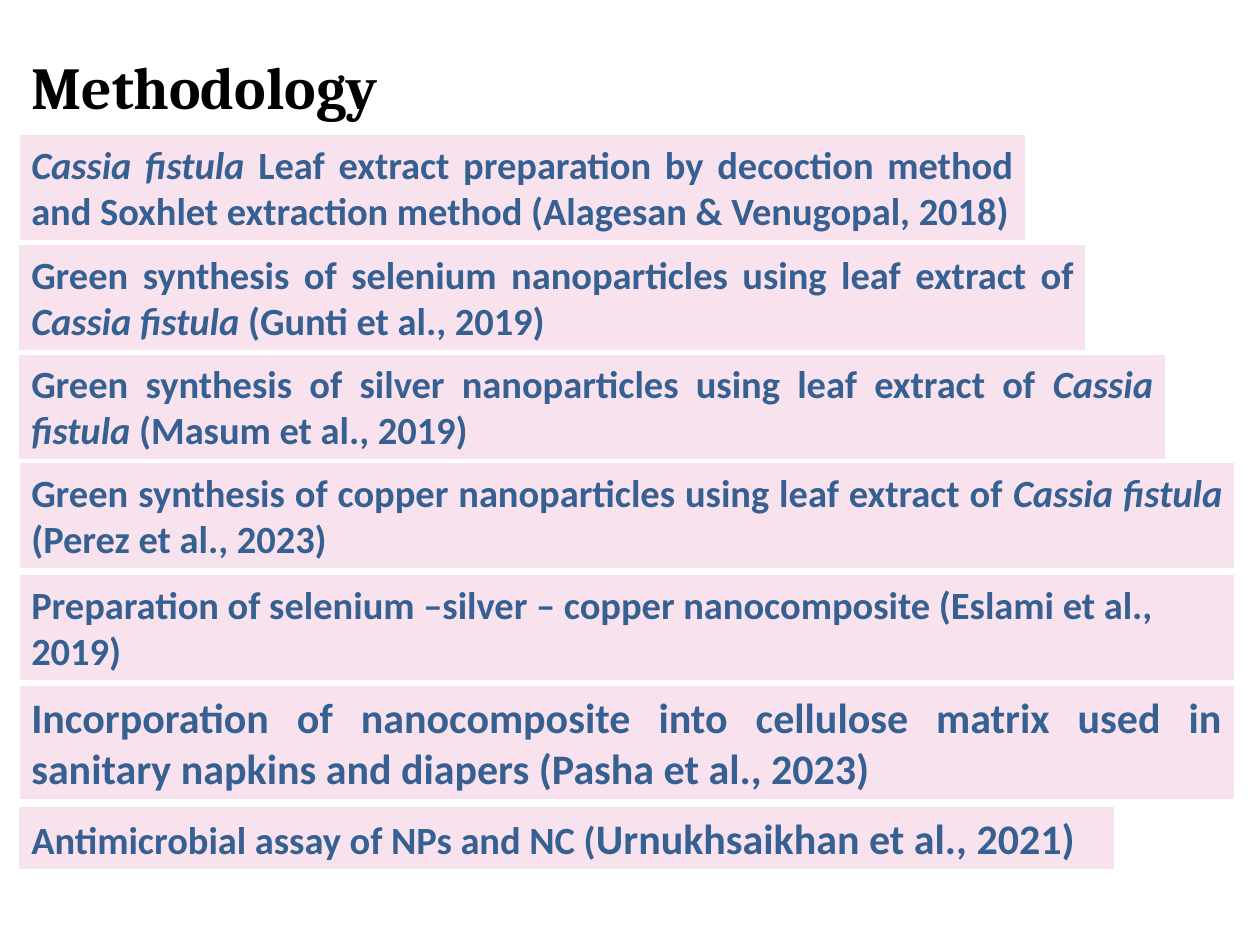
from dataclasses import dataclass

from pptx import Presentation
from pptx.dml.color import RGBColor
from pptx.enum.shapes import MSO_SHAPE
from pptx.enum.text import MSO_ANCHOR, MSO_AUTO_SIZE, PP_ALIGN
from pptx.slide import Slide
from pptx.text.text import _Paragraph as Paragraph
from pptx.util import Inches, Pt

LEFT = 0.15
PINK, BLUE, WHITE, BLACK = "F8E2ED", "376092", "FFFFFF", "000000"


@dataclass
class Span:
    text: str
    size: int = 22
    italic: bool = False


@dataclass
class Step:
    top: float
    width: float
    spans: list[Span]
    height: float = 0.84
    align: PP_ALIGN = PP_ALIGN.JUSTIFY


SPECIES = Span("Cassia fistula ", italic=True)


def synthesis_step(top: float, width: float, metal: str, citation: str) -> Step:
    opening = f"Green synthesis of {metal} nanoparticles using leaf extract of "
    return Step(top, width, [Span(opening), SPECIES, Span(citation)])


STEPS = [
    Step(1.07, 7.99, [SPECIES, Span(
        "Leaf extract preparation by decoction method and Soxhlet "
        "extraction method (Alagesan & Venugopal, 2018)")]),
    synthesis_step(1.94, 8.47, "selenium", "(Gunti et al., 2019)"),
    synthesis_step(2.81, 9.1, "silver", "(Masum et al., 2019)"),
    synthesis_step(3.67, 9.65, "copper", "(Perez et al., 2023)"),
    Step(4.56, 9.65, [Span(
        "Preparation of selenium –silver – copper nanocomposite "
        "(Eslami et al., 2019)")], align=PP_ALIGN.LEFT),
    Step(5.44, 9.65, [Span(
        "Incorporation of nanocomposite into cellulose matrix used in "
        "sanitary napkins and diapers (Pasha et al., 2023)", size=24)], height=0.91),
    Step(6.4, 8.7, [Span("Antimicrobial assay of NPs and NC ("),
                    Span("Urnukhsaikhan et al., 2021)", size=24)], height=0.5),
]


def color(value: str) -> RGBColor:
    return RGBColor.from_string(value)


def add_span(para: Paragraph, span: Span, font_name: str, font_color: str) -> None:
    run = para.add_run()
    run.text = span.text
    font = run.font
    font.name, font.size = font_name, Pt(span.size)
    font.bold, font.italic = True, span.italic
    font.color.rgb = color(font_color)


def add_title(page: Slide, text: str) -> None:
    title = page.shapes.title
    title.left, title.top = Inches(LEFT), Inches(0.35)
    title.width, title.height = Inches(3.06), Inches(0.67)
    frame = title.text_frame
    frame.word_wrap = False
    frame.auto_size = MSO_AUTO_SIZE.SHAPE_TO_FIT_TEXT
    frame.vertical_anchor = MSO_ANCHOR.TOP
    para = frame.paragraphs[0]
    para.alignment = PP_ALIGN.LEFT
    add_span(para, Span(text, size=34), "Cambria", BLACK)


def add_step(page: Slide, step: Step) -> None:
    box = page.shapes.add_shape(
        MSO_SHAPE.RECTANGLE, Inches(LEFT), Inches(step.top),
        Inches(step.width), Inches(step.height))
    box.shadow.inherit = False
    box.fill.solid()
    box.fill.fore_color.rgb = color(PINK)
    box.line.color.rgb = color(WHITE)
    box.line.width = Pt(0.75)
    frame = box.text_frame
    frame.word_wrap = True
    frame.auto_size = MSO_AUTO_SIZE.SHAPE_TO_FIT_TEXT
    frame.vertical_anchor = MSO_ANCHOR.TOP
    para = frame.paragraphs[0]
    para.alignment = step.align
    for span in step.spans:
        add_span(para, span, "Calibri", BLUE)


def main() -> None:
    deck = Presentation()
    deck.slide_width, deck.slide_height = Inches(10), Inches(7.5)
    page = deck.slides.add_slide(deck.slide_layouts.get_by_name("Title Only"))
    add_title(page, "Methodology")
    for step in STEPS:
        add_step(page, step)
    deck.save("out.pptx")


if __name__ == "__main__":
    main()
